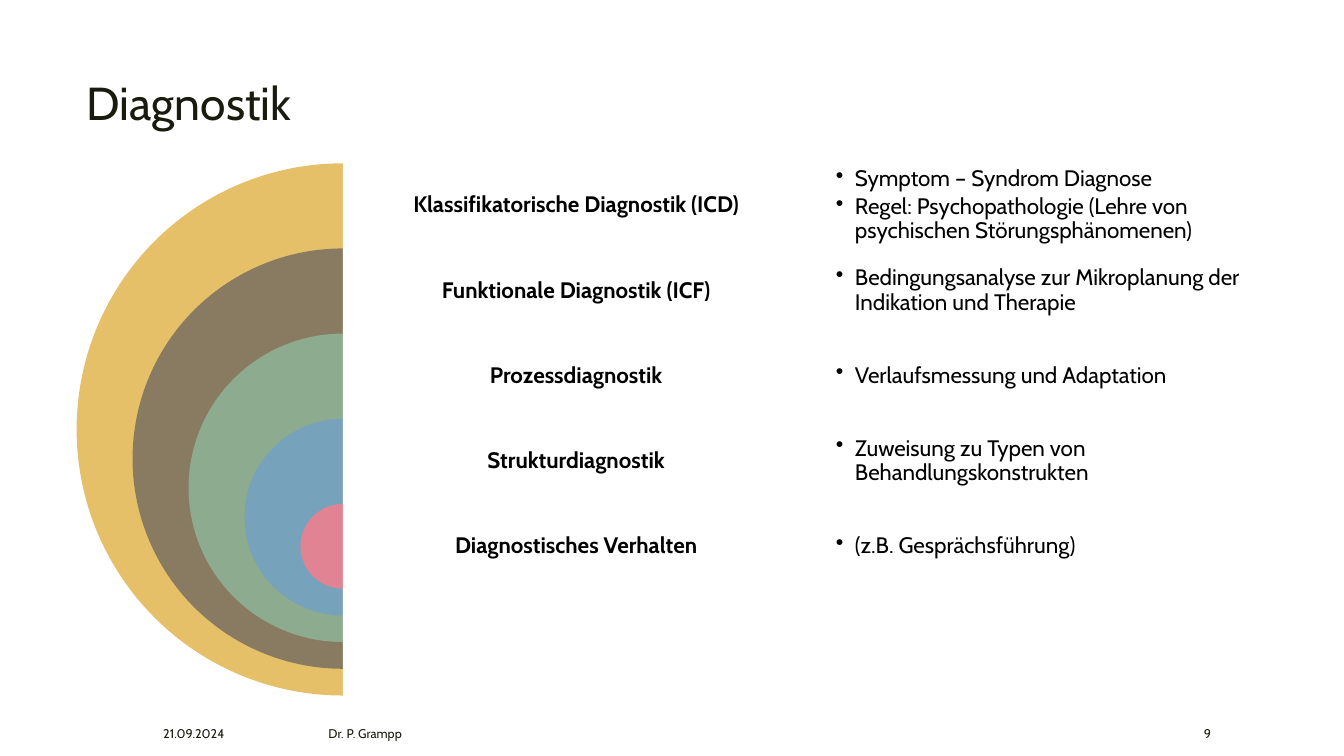
import pptx
import pptx.dml.color
import pptx.enum.shapes
import pptx.enum.text
import pptx.oxml
import pptx.oxml.ns
import pptx.util
from pptx.util import Inches

COLORS = {
    "ink": "191B0E",
    "black": "000000",
    "white": "FFFFFF",
    "gold": "E6C069",
    "brown": "897B61",
    "green": "8DAB8E",
    "blue": "77A2BB",
    "pink": "E28394",
}
ALIGN = pptx.enum.text.PP_ALIGN
ANCHOR = pptx.enum.text.MSO_ANCHOR
SHAPE = pptx.enum.shapes.MSO_SHAPE

LEVELS = [
    ("gold", "Klassifikatorische Diagnostik (ICD)",
     ["Symptom – Syndrom Diagnose",
      "Regel: Psychopathologie (Lehre von psychischen Störungsphänomenen)"]),
    ("brown", "Funktionale Diagnostik (ICF)",
     ["Bedingungsanalyse zur Mikroplanung der Indikation und Therapie"]),
    ("green", "Prozessdiagnostik", ["Verlaufsmessung und Adaptation"]),
    ("blue", "Strukturdiagnostik", ["Zuweisung zu Typen von Behandlungskonstrukten"]),
    ("pink", "Diagnostisches Verhalten", ["(z.B. Gesprächsführung)"]),
]
TOP, STEP = 1.62, 0.845
DIAMETER, SHRINK = 5.28, 1.11
CENTER, COLUMN, ROW = 3.4, 4.63, 0.84
DETAIL_LEFT = 8.02


class SlideBuilder:
    font = "Cabin"

    def __init__(self, page):
        self.page = page

    def color(self, name):
        return pptx.dml.color.RGBColor.from_string(COLORS[name])

    def style(self, para, size, color, bold=False):
        for span in para.runs:
            span.font.name = self.font
            span.font.size = pptx.util.Pt(size)
            span.font.bold = bold
            span.font.color.rgb = self.color(color)

    def title(self, text, left, top, width, height):
        box = self.page.shapes.title
        box.left, box.top = Inches(left), Inches(top)
        box.width, box.height = Inches(width), Inches(height)
        box.text_frame.text = text
        box.text_frame.vertical_anchor = ANCHOR.TOP
        para = box.text_frame.paragraphs[0]
        para.alignment = ALIGN.LEFT
        para.line_spacing = 0.89
        self.style(para, 33, "ink")

    def shape(self, kind, left, top, width, height, color):
        shape = self.page.shapes.add_shape(
            kind, Inches(left), Inches(top), Inches(width), Inches(height))
        shape.shadow.inherit = False
        shape.fill.solid()
        shape.fill.fore_color.rgb = self.color(color)
        shape.line.fill.background()
        return shape

    def half_disc(self, center, top, diameter, color):
        disc = self.shape(SHAPE.PIE, center - diameter / 2, top, diameter, diameter, color)
        disc.adjustments[0] = 54
        disc.adjustments[1] = 162

    def panel(self, left, top, width, height):
        panel = self.shape(SHAPE.RECTANGLE, left, top, width, height, "white")
        tone = panel.fill._xPr.find(".//" + pptx.oxml.ns.qn("a:srgbClr"))
        tone.append(pptx.oxml.parse_xml(
            f'<a:alpha {pptx.oxml.ns.nsdecls("a")} val="90000"/>'))

    def text(self, lines, left, top, width, height, inset=None):
        box = self.page.shapes.add_textbox(
            Inches(left), Inches(top), Inches(width), Inches(height))
        frame = box.text_frame
        frame.text = "\n".join(lines)
        frame.word_wrap = True
        frame.vertical_anchor = ANCHOR.MIDDLE
        if inset is not None:
            frame.margin_left = frame.margin_right = Inches(inset)
            frame.margin_top = frame.margin_bottom = Inches(inset)
        return frame.paragraphs

    def label(self, text, left, top):
        para = self.text([text], left, top, COLUMN, ROW, 0.07)[0]
        para.alignment = ALIGN.CENTER
        para.line_spacing = 0.9
        self.style(para, 16, "black", True)

    def bullets(self, lines, left, top):
        for para in self.text(lines, left, top, COLUMN, ROW, 0.27):
            para.level = 1
            para.line_spacing = 0.9
            para.space_after = pptx.util.Pt(2.4)
            properties = para._p.get_or_add_pPr()
            properties.set("marL", str(Inches(0.19)))
            properties.set("indent", str(Inches(-0.19)))
            properties.append(pptx.oxml.parse_xml(
                f'<a:buChar {pptx.oxml.ns.nsdecls("a")} char="•"/>'))
            self.style(para, 16, "black")

    def footer(self, text, left, width, alignment=ALIGN.LEFT):
        para = self.text([text], left, 7.06, width, 0.44)[0]
        para.alignment = alignment
        self.style(para, 9, "ink")


def main():
    deck = pptx.Presentation()
    deck.slide_width, deck.slide_height = Inches(13.33), Inches(7.5)
    builder = SlideBuilder(deck.slides.add_slide(deck.slide_layouts[5]))
    builder.title("Diagnostik", 0.76, 0.75, 11.89, 0.8)

    for index, (color, name, details) in enumerate(LEVELS):
        top = TOP + index * STEP
        diameter = DIAMETER - index * SHRINK
        builder.half_disc(CENTER, top, diameter, color)
        builder.panel(CENTER, top, 2 * COLUMN, diameter)
        builder.label(name, CENTER, top)

    for index, (color, name, details) in enumerate(LEVELS):
        builder.bullets(details, DETAIL_LEFT, TOP + index * STEP)

    builder.footer("21.09.2024", 1.52, 1.32)
    builder.footer("Dr. P. Grampp", 3.16, 6.87)
    builder.footer("9", 10.36, 1.75, ALIGN.RIGHT)
    deck.save("out.pptx")


if __name__ == "__main__":
    main()
